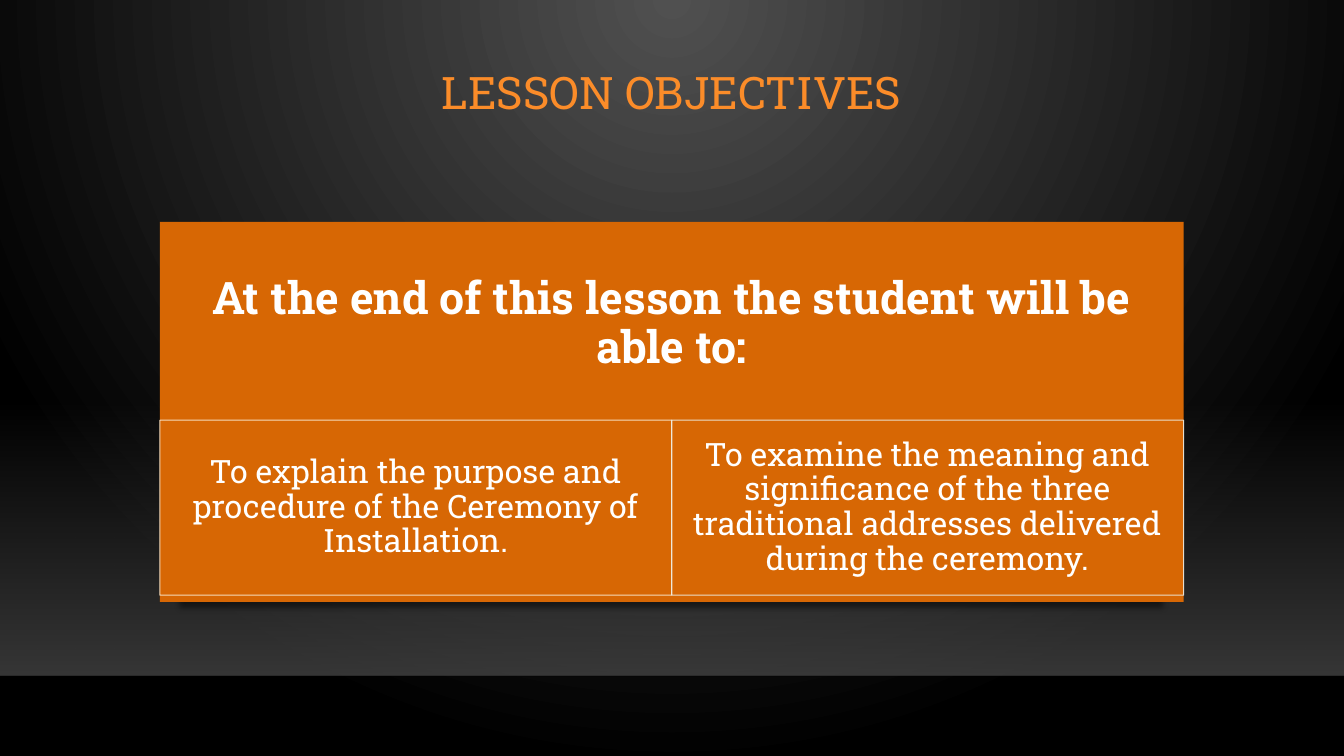
"""Build the lesson objectives slide."""
from dataclasses import dataclass

import pptx
import pptx.dml.color
import pptx.enum.shapes
import pptx.enum.text
import pptx.oxml
import pptx.oxml.ns
import pptx.util
from pptx.util import Cm


@dataclass(frozen=True)
class Theme:
    """Colours, font and type sizes."""
    font: str = "Roboto Slab"
    title: str = "FB8C29"
    panel: str = "D76704"
    text: str = "FFFFFF"
    glow: str = "505050"
    dark: str = "000000"
    floor: str = "454545"
    borders: tuple = ("FAE9D0", "EEECE1")
    heading_size: int = 32
    objective_size: int = 23


THEME = Theme()
WIDTH, HEIGHT = Cm(33.87), Cm(19.05)
LEFT, PANEL_WIDTH = Cm(4.03), Cm(25.8)
PANEL_TOP = Cm(5.59)
OBJECTIVES = (
    "To explain the purpose and procedure of the Ceremony of Installation.",
    "To examine the meaning and significance of the three traditional "
    "addresses delivered during the ceremony.",
)


def colour(value):
    """Turn a hex string into a colour."""
    return pptx.dml.color.RGBColor.from_string(value)


def set_alpha(element, percent):
    """Set the opacity of the first colour inside an element."""
    target = element.find(".//" + pptx.oxml.ns.qn("a:srgbClr"))
    target.append(pptx.oxml.parse_xml(
        f'<a:alpha {pptx.oxml.ns.nsdecls("a")} val="{percent * 1000}"/>'))


def set_gradient(fill, element, stops, direction):
    """Fill with stops of position, colour and opacity."""
    fill.gradient()
    gradient = element.find(".//" + pptx.oxml.ns.qn("a:gradFill"))
    stop_xml = "".join(
        f'<a:gs pos="{position * 1000}"><a:srgbClr val="{value}">'
        f'<a:alpha val="{alpha * 1000}"/></a:srgbClr></a:gs>'
        for position, value, alpha in stops)
    gradient.getparent().replace(gradient, pptx.oxml.parse_xml(
        f'<a:gradFill {pptx.oxml.ns.nsdecls("a")} rotWithShape="1">'
        f'<a:gsLst>{stop_xml}</a:gsLst>{direction}</a:gradFill>'))


def add_rectangle(slide, left, top, width, height, fill=None):
    """Add a rectangle with no line and no shadow."""
    shape = slide.shapes.add_shape(
        pptx.enum.shapes.MSO_SHAPE.RECTANGLE, left, top, width, height)
    shape.shadow.inherit = False
    shape.line.fill.background()
    if fill:
        shape.fill.solid()
        shape.fill.fore_color.rgb = colour(fill)
    return shape


def write(shape, text, size, value, margins=None, bold=False):
    """Write one centred paragraph in a shape."""
    frame = shape.text_frame
    frame.text = text
    frame.word_wrap = True
    frame.auto_size = pptx.enum.text.MSO_AUTO_SIZE.NONE
    frame.vertical_anchor = pptx.enum.text.MSO_ANCHOR.MIDDLE
    if margins:
        frame.margin_left = frame.margin_right = margins[0]
        frame.margin_top = frame.margin_bottom = margins[1]
    para = frame.paragraphs[0]
    para.alignment = pptx.enum.text.PP_ALIGN.CENTER
    para.line_spacing = 0.9
    para.space_before = pptx.util.Pt(0)
    span = para.runs[0]
    span.font.name = THEME.font
    span.font.size = pptx.util.Pt(size)
    span.font.bold = bold
    span.font.color.rgb = colour(value)


def add_backdrop(slide):
    """Draw the lit background, the floor and its edge."""
    set_gradient(slide.background.fill, slide.element,
                 [(0, THEME.glow, 100), (100, THEME.dark, 100)],
                 '<a:path path="circle"><a:fillToRect l="43000" t="0" '
                 'r="43000" b="100000"/></a:path>')
    top, bottom = Cm(10.06), Cm(17.03)
    floor = add_rectangle(slide, 0, top, WIDTH, bottom - top)
    set_gradient(floor.fill, floor.element,
                 [(0, THEME.floor, 0), (100, THEME.floor, 80)],
                 '<a:lin ang="5400000" scaled="0"/>')
    edge = slide.shapes.add_connector(
        pptx.enum.shapes.MSO_CONNECTOR.STRAIGHT, 0, bottom, WIDTH, bottom)
    edge.line.width = pptx.util.Pt(1)
    edge.line.color.rgb = colour(THEME.dark)
    properties = edge.element.spPr
    set_alpha(properties, 20)
    properties.append(pptx.oxml.parse_xml(
        f'<a:effectLst {pptx.oxml.ns.nsdecls("a")}/>'))


def add_title(slide, text):
    """Place and format the title."""
    title = slide.shapes.title
    title.left, title.top = LEFT, Cm(0.94)
    title.width, title.height = PANEL_WIDTH, Cm(2.92)
    write(title, text, THEME.heading_size, THEME.title)


def add_panel(slide, heading):
    """Draw the shadowed panel and its heading."""
    panel = add_rectangle(
        slide, LEFT, PANEL_TOP, PANEL_WIDTH, Cm(9.58), THEME.panel)
    effects = panel.element.spPr.find(pptx.oxml.ns.qn("a:effectLst"))
    effects.append(pptx.oxml.parse_xml(
        f'<a:outerShdw {pptx.oxml.ns.nsdecls("a")} blurRad="50800" '
        'dist="50800" dir="5400000" sx="96000" algn="ctr" rotWithShape="0">'
        f'<a:srgbClr val="{THEME.dark}"><a:alpha val="48000"/></a:srgbClr>'
        '</a:outerShdw>'))
    box = slide.shapes.add_textbox(LEFT, PANEL_TOP, PANEL_WIDTH, Cm(5.18))
    write(box, heading, THEME.heading_size, THEME.text,
          (Cm(0.64), Cm(0.64)), bold=True)


def add_objectives(slide):
    """Draw the objectives side by side in equal cells."""
    width = PANEL_WIDTH // len(OBJECTIVES)
    for index, (text, border) in enumerate(zip(OBJECTIVES, THEME.borders)):
        cell = add_rectangle(slide, LEFT + index * width, Cm(10.59),
                             width, Cm(4.41), THEME.panel)
        set_alpha(cell.element.spPr, 90)
        cell.line.color.rgb = colour(border)
        cell.line.width = pptx.util.Pt(0.75)
        set_alpha(cell.element.spPr.find(pptx.oxml.ns.qn("a:ln")), 90)
        write(cell, text, THEME.objective_size, THEME.text,
              (Cm(0.46), Cm(0.08)))


def main():
    """Build and save the deck."""
    deck = pptx.Presentation()
    deck.slide_width, deck.slide_height = WIDTH, HEIGHT
    slide = deck.slides.add_slide(deck.slide_layouts[5])
    add_backdrop(slide)
    add_title(slide, "LESSON OBJECTIVES")
    add_panel(slide, "At the end of this lesson the student will be able to:")
    add_objectives(slide)
    deck.save("out.pptx")


if __name__ == "__main__":
    main()
